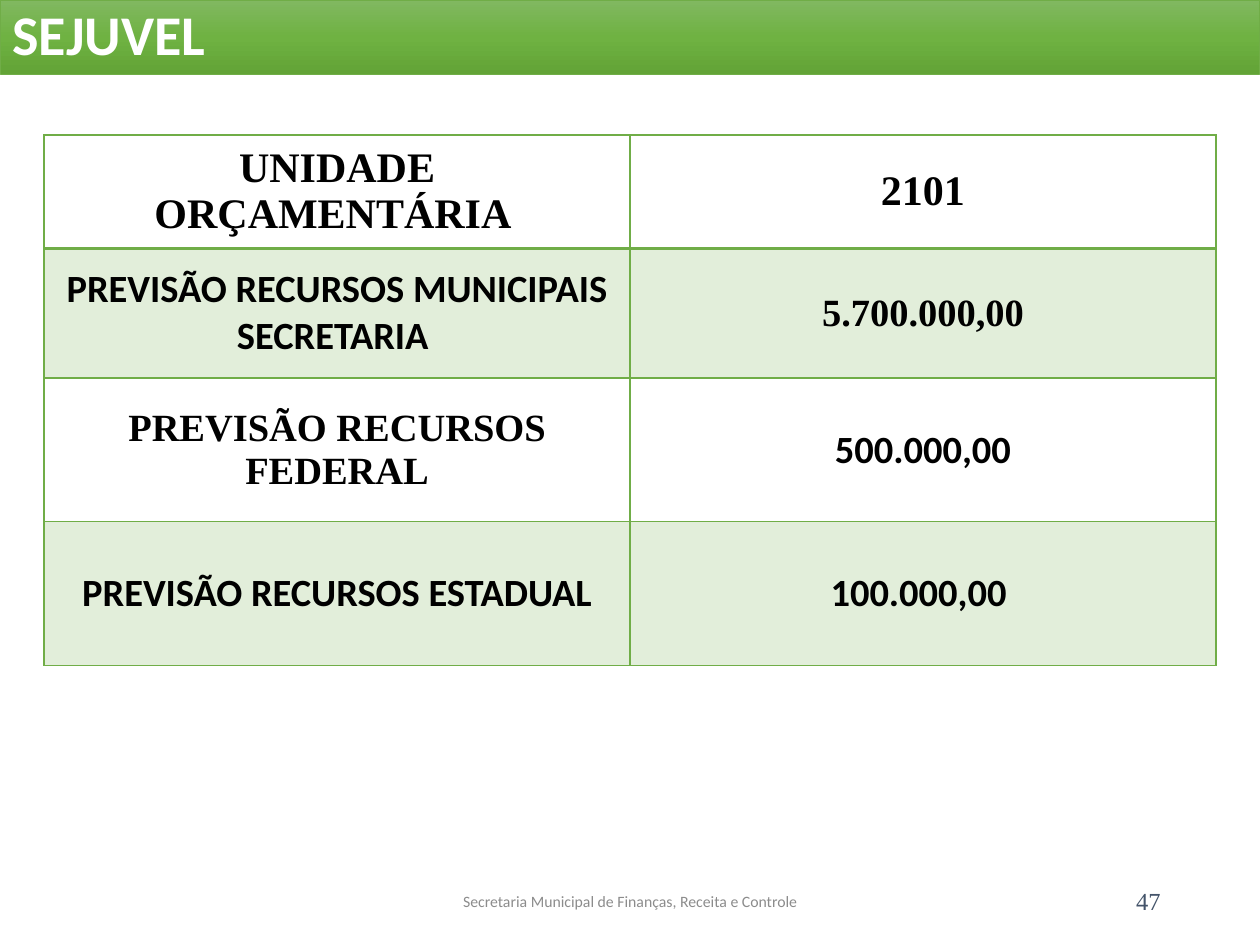
import copy

import pptx
import pptx.dml.color
import pptx.enum.shapes
import pptx.enum.text
import pptx.oxml
import pptx.oxml.ns
import pptx.util
from pptx.dml.color import RGBColor
from pptx.util import Inches

GREEN = RGBColor(0x70, 0xAD, 0x47)
BANNER_STOPS = [
    (0, RGBColor(0x81, 0xB8, 0x61)),
    (0.5, RGBColor(0x6F, 0xB2, 0x42)),
    (1, RGBColor(0x62, 0xA3, 0x36)),
]
WHITE = RGBColor(0xFF, 0xFF, 0xFF)
BLACK = RGBColor(0, 0, 0)
GREY = RGBColor(0x8C, 0x8C, 0x8C)
SLATE = RGBColor(0x44, 0x54, 0x6A)

SANS = "Calibri"
SERIF = "Times New Roman"
ALIGN = pptx.enum.text.PP_ALIGN
MIDDLE = pptx.enum.text.MSO_ANCHOR.MIDDLE

ROW_HEIGHTS = [0.9, 1.03, 1.14, 1.14]
COLUMN_WIDTH = 4.65
# Each cell: text, font name, size
BUDGET_ROWS = [
    [("UNIDADE ORÇAMENTÁRIA ", SERIF, 24), ("2101", SERIF, 24)],
    [("PREVISÃO RECURSOS MUNICIPAIS SECRETARIA ", SANS, 22), ("5.700.000,00", SERIF, 22)],
    [("PREVISÃO RECURSOS FEDERAL", SERIF, 22), ("500.000,00", SANS, 22)],
    [("PREVISÃO RECURSOS ESTADUAL", SANS, 22), ("100.000,00 ", SANS, 22)],
]


def write_text(text_frame, text, font_name, size, color, align, bold=False):
    text_frame.word_wrap = True
    paragraph = text_frame.paragraphs[0]
    paragraph.text = text
    paragraph.alignment = align
    font = paragraph.font
    font.name = font_name
    font.size = pptx.util.Pt(size)
    font.bold = bold
    font.color.rgb = color
    return paragraph


def add_banner(slide, title):
    banner = slide.shapes.add_shape(
        pptx.enum.shapes.MSO_SHAPE.RECTANGLE, 0, 0, Inches(10), Inches(0.59))
    banner.shadow.inherit = False
    banner.line.color.rgb = GREEN
    banner.line.width = pptx.util.Pt(0.5)
    fill_banner(banner.fill)
    banner.text_frame.vertical_anchor = MIDDLE
    paragraph = write_text(banner.text_frame, title, SANS, 32, WHITE, ALIGN.LEFT, bold=True)
    paragraph.line_spacing = 0.9


def fill_banner(fill):
    """Apply the three-stop gradient, running from top to bottom."""
    fill.gradient()
    fill.gradient_angle = 270
    stop_list = fill._fill._gradFill.find(pptx.oxml.ns.qn("a:gsLst"))
    stop_list.insert(1, copy.deepcopy(stop_list[0]))
    for stop, (position, color) in zip(fill.gradient_stops, BANNER_STOPS):
        stop.position = position
        stop.color.rgb = color


def add_footer_text(slide, left, width, text, font_name, size, color, align):
    box = slide.shapes.add_textbox(Inches(left), Inches(6.95), Inches(width), Inches(0.4))
    box.text_frame.vertical_anchor = MIDDLE
    write_text(box.text_frame, text, font_name, size, color, align)


def set_border(cell, side, points):
    width = pptx.util.Pt(points)
    cell._tc.get_or_add_tcPr().append(pptx.oxml.parse_xml(
        f'<a:ln{side} {pptx.oxml.ns.nsdecls("a")} w="{width}">'
        f'<a:solidFill><a:srgbClr val="{GREEN}"/></a:solidFill></a:ln{side}>'))


def tint_cell(cell):
    """Fill the cell with green at 20 % opacity."""
    cell.fill.solid()
    cell.fill.fore_color.rgb = GREEN
    color = cell._tc.tcPr.find(".//" + pptx.oxml.ns.qn("a:solidFill") + "[last()]/..")
    color = cell._tc.tcPr.find(pptx.oxml.ns.qn("a:solidFill"))[0]
    color.append(pptx.oxml.parse_xml(
        f'<a:alpha {pptx.oxml.ns.nsdecls("a")} val="20000"/>'))


def add_budget_table(slide):
    table = slide.shapes.add_table(
        len(BUDGET_ROWS), 2, Inches(0.35), Inches(1.07),
        Inches(2 * COLUMN_WIDTH), Inches(sum(ROW_HEIGHTS))).table
    table.first_row = False
    table.horz_banding = False
    for column in table.columns:
        column.width = Inches(COLUMN_WIDTH)
    for row_index, (height, entries) in enumerate(zip(ROW_HEIGHTS, BUDGET_ROWS)):
        table.rows[row_index].height = Inches(height)
        for column_index, (text, font_name, size) in enumerate(entries):
            cell = table.cell(row_index, column_index)
            cell.vertical_anchor = MIDDLE
            write_text(cell.text_frame, text, font_name, size, BLACK, ALIGN.CENTER, bold=True)
            set_border(cell, "L", 1)
            set_border(cell, "R", 1)
            set_border(cell, "T", 2 if row_index == 1 else 1)
            set_border(cell, "B", 2 if row_index == 0 else 1)
            if row_index % 2:
                tint_cell(cell)
            else:
                cell.fill.background()


def main():
    presentation = pptx.Presentation()
    presentation.slide_width = Inches(10)
    presentation.slide_height = Inches(7.5)
    slide = presentation.slides.add_slide(presentation.slide_layouts[6])
    add_footer_text(slide, 7.06, 2.25, "47", SERIF, 14, SLATE, ALIGN.RIGHT)
    add_banner(slide, "SEJUVEL")
    add_footer_text(slide, 3.31, 3.38, "Secretaria Municipal de Finanças, Receita e Controle",
                    SANS, 9, GREY, ALIGN.CENTER)
    add_budget_table(slide)
    presentation.save("out.pptx")


if __name__ == "__main__":
    main()
